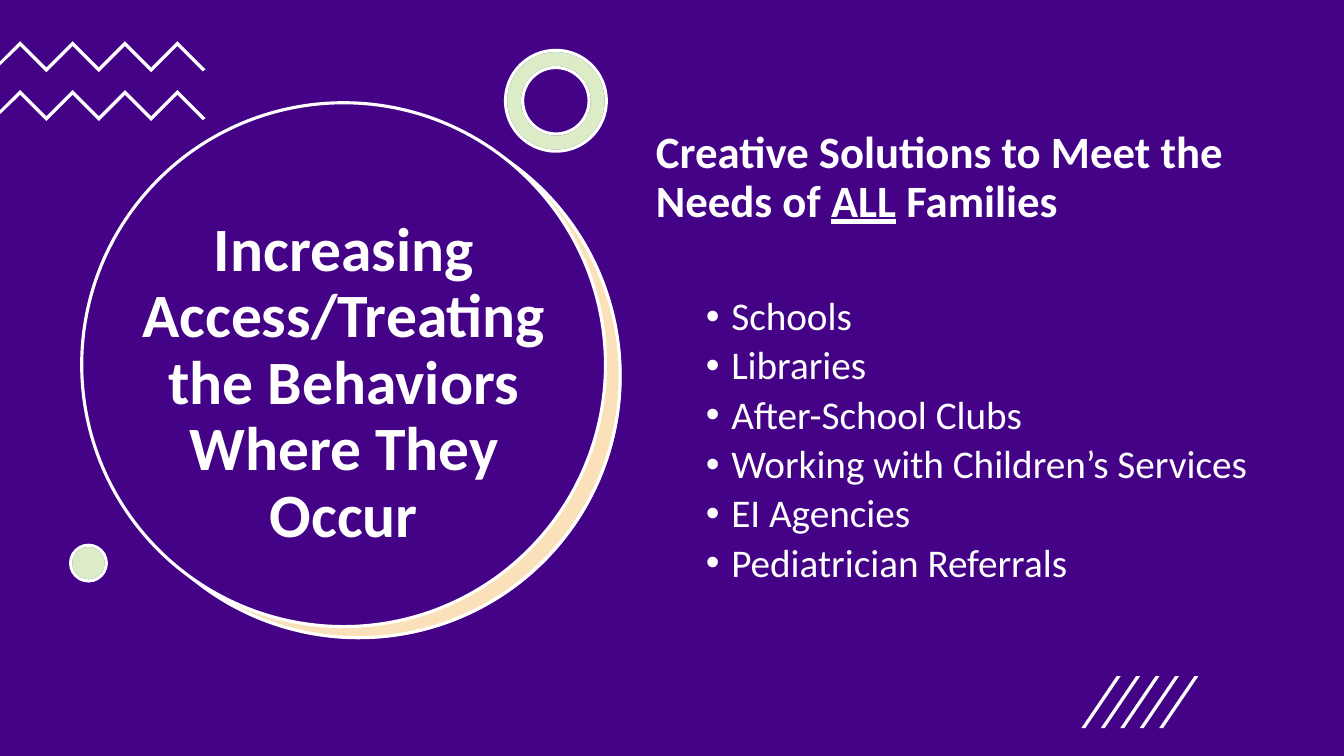
from lxml import etree
from pptx import Presentation
from pptx import util as u
from pptx.dml.color import RGBColor
from pptx.enum import shapes, text
from pptx.oxml.ns import qn

# Content
TITLE = "Increasing Access/Treating the Behaviors Where They Occur"
HEADING = [("Creative Solutions to Meet the Needs of ", False), ("ALL", True), (" Families", False)]
PLACES = ["Schools", "Libraries", "After-School Clubs", "Working with Children’s Services",
          "EI Agencies", "Pediatrician Referrals"]

FONT = "Calibri"
C = {"purple": "440287", "white": "FFFFFF", "orange": "F19D19", "green": "8BC145"}
W, H = 33.87, 19.05
OVAL, DONUT = shapes.MSO_SHAPE.OVAL, shapes.MSO_SHAPE.DONUT

# Round parts, back to front: kind, left, top, diameter, fill, opacity %, line
ROUNDS = [
    (OVAL, 2.46, 2.9, 13.2, "white", 100, None),
    (OVAL, 2.43, 2.87, 13.2, "orange", 30, "white"),
    (OVAL, 2.06, 2.59, 13.2, "purple", 100, "white"),
    (DONUT, 12.74, 1.27, 2.54, "white", 100, "purple"),
    (DONUT, 12.74, 1.27, 2.54, "green", 30, "white"),
    (OVAL, 1.78, 13.74, 0.9, "white", 100, "purple"),
    (OVAL, 1.78, 13.74, 0.9, "green", 30, "white"),
]

prs = Presentation()
prs.slide_width, prs.slide_height = u.Cm(W), u.Cm(H)
s = prs.slides.add_slide(prs.slide_layouts[6])


def rgb(name):
    return RGBColor.from_string(C[name])


def paint(sp, fill, opacity=100, line=None):
    sp.shadow.inherit = False
    sp.fill.solid()
    sp.fill.fore_color.rgb = rgb(fill)
    if opacity < 100:
        color = sp._element.spPr.find(qn("a:solidFill"))[0]
        etree.SubElement(color, qn("a:alpha"), val=str(opacity * 1000))
    if line:
        sp.line.color.rgb = rgb(line)
        sp.line.width = u.Pt(2.25)
    else:
        sp.line.fill.background()


def add_preset(kind, x, y, w, h, *look):
    sp = s.shapes.add_shape(kind, u.Cm(x), u.Cm(y), u.Cm(w), u.Cm(h))
    paint(sp, *look)
    return sp


def add_outline(points):
    pts = [(u.Cm(x), u.Cm(y)) for x, y in points]
    fb = s.shapes.build_freeform(*pts[0], scale=1.0)
    fb.add_line_segments(pts[1:], close=True)
    paint(fb.convert_to_shape(), "white")


def add_frame(x, y, w, h, anchor):
    tf = s.shapes.add_textbox(u.Cm(x), u.Cm(y), u.Cm(w), u.Cm(h)).text_frame
    tf.word_wrap = True
    tf.vertical_anchor = anchor
    return tf


def add_run(p, words, size, bold=False, underline=False):
    r = p.add_run()
    r.text = words
    r.font.name, r.font.size = FONT, u.Pt(size)
    r.font.bold, r.font.underline = bold, underline
    r.font.color.rgb = rgb("white")


# Background and big circles
add_preset(shapes.MSO_SHAPE.RECTANGLE, 0, 0, W, H, "purple")
for kind, x, y, d, *look in ROUNDS:
    sp = add_preset(kind, x, y, d, d, *look)
    if kind == DONUT:
        sp.adjustments[0] = 0.17

# Title
tf = add_frame(3.07, 5.21, 11.2, 8.94, text.MSO_ANCHOR.MIDDLE)
p = tf.paragraphs[0]
p.alignment, p.line_spacing = text.PP_ALIGN.CENTER, 0.9
add_run(p, TITLE, 44, True)

# Zigzags: upper edge rightwards, cut end, lower edge back
STEP, THICK = 0.66, 0.12
for top in (1.04, 2.27):
    upper = [(0.51 + i * STEP, top + i % 2 * STEP) for i in range(7)]
    lower = [(x, y + THICK) for x, y in reversed(upper)]
    add_outline(upper + [(5.18, top + 1.75 - 1.04), (5.11, top + 1.8 - 1.04)]
                + lower + [(0, top + 0.61), (0, top + 0.51)])

# Heading and list
tf = add_frame(16.28, 3.15, 15.54, 13.2, text.MSO_ANCHOR.TOP)
p = tf.paragraphs[0]
p.line_spacing = 0.9
for words, underline in HEADING:
    add_run(p, words, 32, True, underline)
for i, place in enumerate(PLACES):
    p = tf.add_paragraph()
    p.level, p.line_spacing = 1, 0.9
    p.space_before = u.Pt(5 if i else 50)
    pPr = p._p.get_or_add_pPr()
    pPr.set("marL", str(u.Cm(1.9)))
    pPr.set("indent", str(u.Cm(-0.64)))
    color = etree.SubElement(pPr, qn("a:buClr"))
    etree.SubElement(color, qn("a:srgbClr"), val=C["white"])
    etree.SubElement(pPr, qn("a:buFont"), typeface="Arial")
    etree.SubElement(pPr, qn("a:buChar"), char="•")
    add_run(p, place, 28)

# Slanted stripes
for i in range(5):
    x = 27.25 + i * 0.49
    add_outline([(x + 0.1, 18.35), (x, 18.35), (x + 0.89, 17.04), (x + 0.99, 17.04)])

prs.save("out.pptx")
